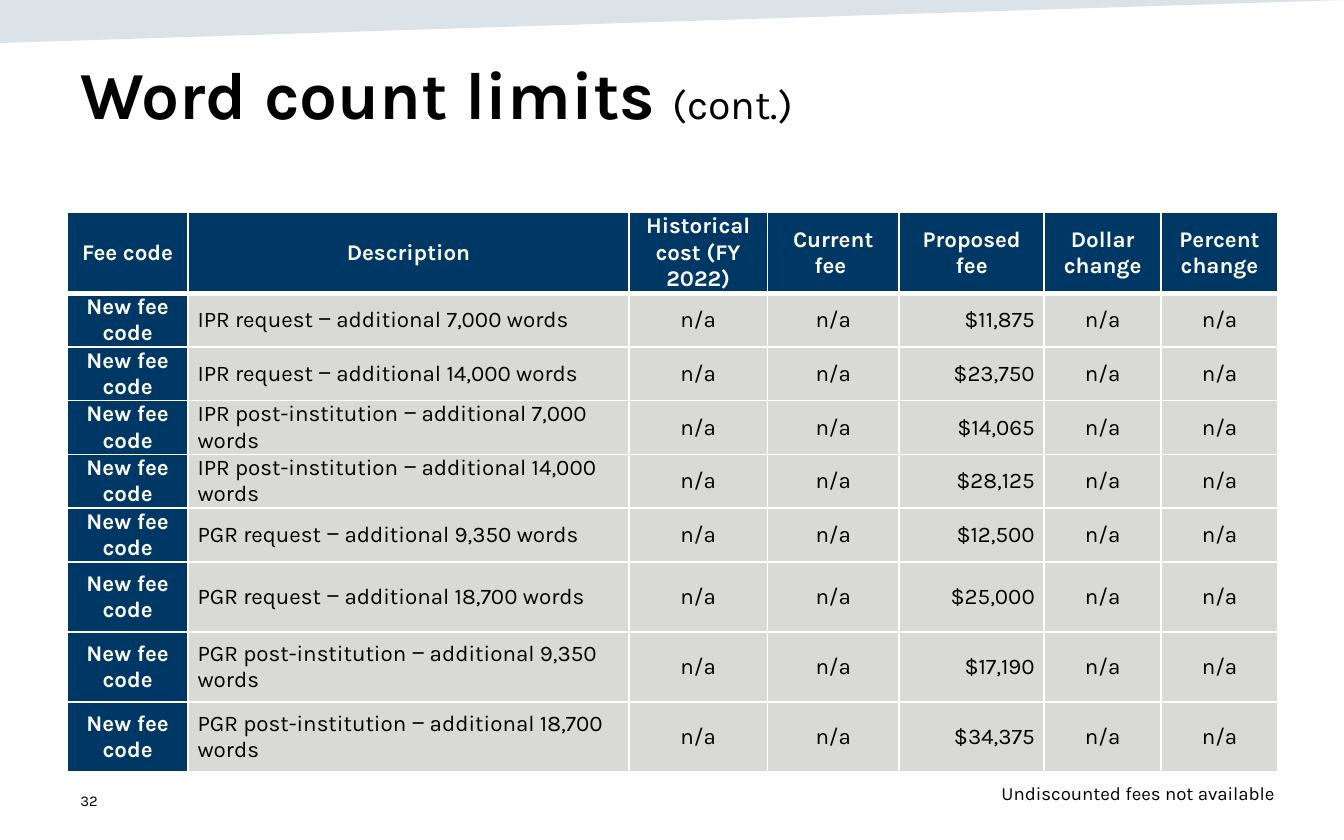
from dataclasses import dataclass

from lxml.etree import SubElement
from pptx import Presentation
from pptx.dml.color import RGBColor
from pptx.enum.text import MSO_ANCHOR as Anchor, PP_ALIGN as Align
from pptx.oxml.ns import qn
from pptx.util import Inches, Pt


@dataclass(frozen=True)
class Theme:
    font: str = "Karla"
    ink: str = "000000"
    white: str = "FFFFFF"
    navy: str = "003865"
    gray: str = "D9D9D6"
    wedge: str = "164469"
    wedge_opacity: int = 15
    title_size: int = 36
    subtitle_size: int = 22
    table_size: int = 12
    note_size: int = 10
    number_size: int = 8


THEME = Theme()

HEADERS = ["Fee code", "Description", "Historical cost (FY 2022)", "Current fee\u00a0",
           "Proposed fee", "Dollar change", "Percent change"]
FEES = [
    ("IPR request ‒ additional 7,000 words", "$11,875"),
    ("IPR request ‒ additional 14,000 words", "$23,750"),
    ("IPR post-institution ‒ additional 7,000 words", "$14,065"),
    ("IPR post-institution ‒ additional 14,000 words", "$28,125"),
    ("PGR request ‒ additional 9,350 words", "$12,500"),
    ("PGR request ‒ additional 18,700 words", "$25,000"),
    ("PGR post-institution ‒ additional 9,350 words", "$17,190"),
    ("PGR post-institution ‒ additional 18,700 words", "$34,375"),
]
COLUMN_WIDTHS = [0.9, 3.28, 1.03, 0.98, 1.08, 0.87, 0.87]
COLUMN_ALIGNS = [Align.CENTER, Align.LEFT, Align.CENTER, Align.CENTER,
                 Align.RIGHT, Align.CENTER, Align.CENTER]
ROW_HEIGHTS = [0.52] + [0.35] * 5 + [0.52] * 3


def add_text(paragraph, text, size, color=THEME.ink, bold=False, align=Align.LEFT, space=0):
    paragraph.alignment = align
    paragraph.space_before = paragraph.space_after = Pt(space)
    run = paragraph.add_run()
    run.text = text
    run.font.name = THEME.font
    run.font.size = Pt(size)
    run.font.bold = bold
    run.font.color.rgb = RGBColor.from_string(color)


def add_wedge(slide, left, top, width, height):
    builder = slide.shapes.build_freeform(Inches(left), Inches(top))
    builder.add_line_segments([(Inches(left), Inches(top + height)),
                               (Inches(left + width), Inches(top))])
    shape = builder.convert_to_shape()
    shape.shadow.inherit = False
    shape.line.fill.background()
    shape.fill.solid()
    shape.fill.fore_color.rgb = RGBColor.from_string(THEME.wedge)
    color = shape.fill._xPr.find(f".//{qn('a:srgbClr')}")
    SubElement(color, qn("a:alpha"), val=str(THEME.wedge_opacity * 1000))


def place_title(slide, left, top, width, height):
    title = slide.shapes.title
    title.left, title.top = Inches(left), Inches(top)
    title.width, title.height = Inches(width), Inches(height)
    title.text_frame.vertical_anchor = Anchor.TOP
    paragraph = title.text_frame.paragraphs[0]
    add_text(paragraph, "Word count limits ", THEME.title_size, bold=True)
    add_text(paragraph, "(cont.)", THEME.subtitle_size)


def set_borders(cell, **widths):
    """Draw white cell borders; widths in points by side: L, R, T, B."""
    properties = cell._tc.get_or_add_tcPr()
    for side, width in widths.items():
        line = SubElement(properties, qn(f"a:ln{side}"), w=str(Pt(width)))
        fill = SubElement(line, qn("a:solidFill"))
        SubElement(fill, qn("a:srgbClr"), val=THEME.white)


def fill_cell(cell, text, row, column):
    is_header = row == 0
    is_label = is_header or column == 0
    set_borders(cell, L=1, R=1, T=3 if row == 1 else 1, B=3 if is_header else 1)
    cell.fill.solid()
    cell.fill.fore_color.rgb = RGBColor.from_string(THEME.navy if is_label else THEME.gray)
    cell.vertical_anchor = Anchor.MIDDLE
    cell.margin_left = cell.margin_right = Inches(0.07)
    cell.margin_top = cell.margin_bottom = 0
    add_text(cell.text_frame.paragraphs[0], text, THEME.table_size, bold=is_label,
             color=THEME.white if is_label else THEME.ink,
             align=Align.CENTER if is_header else COLUMN_ALIGNS[column],
             space=0 if is_header else 6)


def add_fee_table(slide, left, top, width, height):
    rows = [HEADERS] + [["New fee code", description, "n/a", "n/a", fee, "n/a", "n/a"]
                        for description, fee in FEES]
    table = slide.shapes.add_table(len(rows), len(HEADERS), Inches(left), Inches(top),
                                   Inches(width), Inches(height)).table
    for column, column_width in zip(table.columns, COLUMN_WIDTHS):
        column.width = Inches(column_width)
    for table_row, row_height in zip(table.rows, ROW_HEIGHTS):
        table_row.height = Inches(row_height)
    for row, texts in enumerate(rows):
        for column, text in enumerate(texts):
            fill_cell(table.cell(row, column), text, row, column)


def add_text_box(slide, left, top, width, height, text, size, anchor=Anchor.TOP, **text_format):
    box = slide.shapes.add_textbox(Inches(left), Inches(top), Inches(width), Inches(height))
    box.text_frame.word_wrap = True
    box.text_frame.vertical_anchor = anchor
    add_text(box.text_frame.paragraphs[0], text, size, **text_format)


def main():
    presentation = Presentation()
    presentation.slide_width, presentation.slide_height = Inches(10), Inches(6.25)
    slide = presentation.slides.add_slide(presentation.slide_layouts[5])
    add_wedge(slide, 0, 0, 10, 0.32)
    add_text_box(slide, 0.5, 5.79, 2.25, 0.33, "32", THEME.number_size, anchor=Anchor.MIDDLE)
    place_title(slide, 0.5, 0.34, 9, 1.04)
    add_fee_table(slide, 0.5, 1.58, sum(COLUMN_WIDTHS), sum(ROW_HEIGHTS))
    add_text_box(slide, 0.4, 5.77, 9.18, 0.27, "Undiscounted fees not available",
                 THEME.note_size, align=Align.RIGHT)
    presentation.save("out.pptx")


if __name__ == "__main__":
    main()
